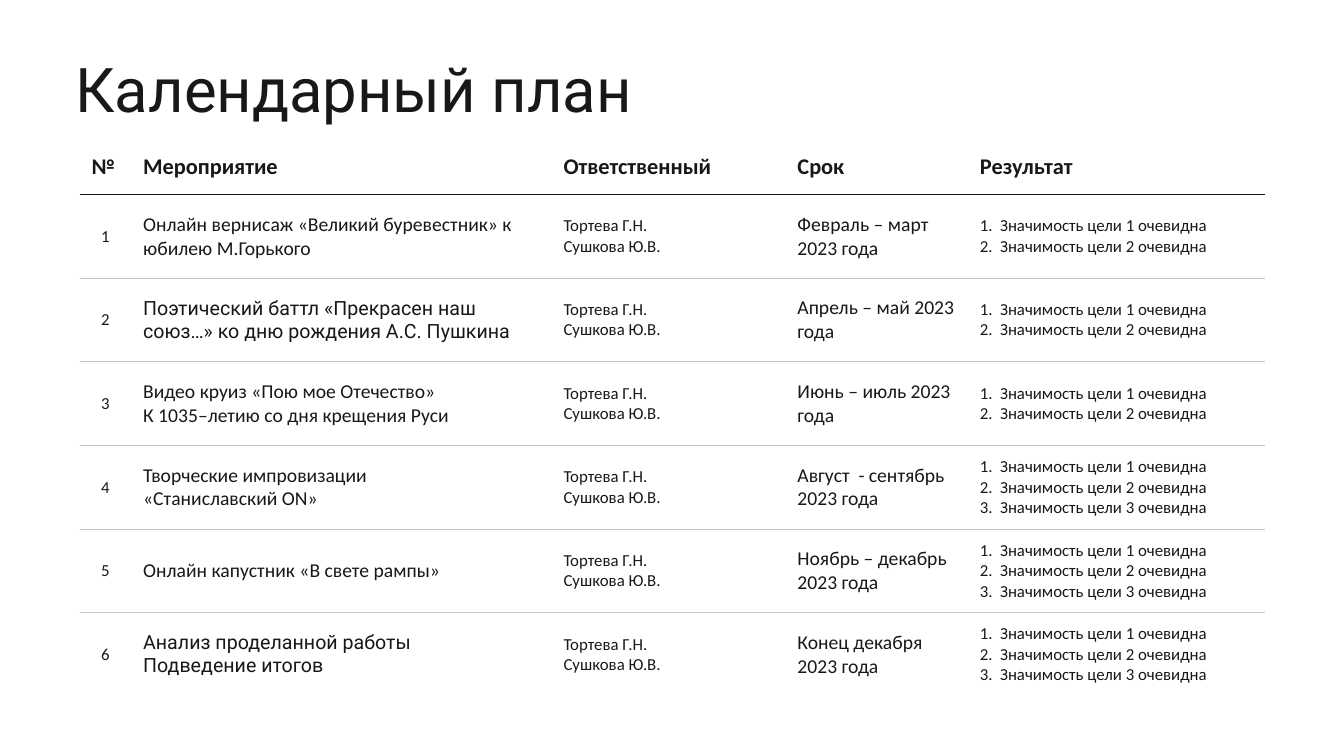
from lxml import etree
from pptx import Presentation
from pptx.dml.color import RGBColor
from pptx.enum.text import MSO_ANCHOR, PP_ALIGN
from pptx.oxml.ns import qn
from pptx.util import Pt

MIDDLE = MSO_ANCHOR.MIDDLE
CENTER = PP_ALIGN.CENTER
PX = 9144  # 100 px to the inch
COLORS = {"ink": "181818", "rule": "C5C5C5"}
BODY_FONT, ACCENT_FONT = "Calibri", "Roboto"
NO_STYLE = "{2D5ABB26-0587-4C30-8999-92F81FD0307C}"

TITLE = "Календарный план"
HEADERS = ["№", "Мероприятие", "Ответственный", "Срок", "Результат"]
PEOPLE = ["Тортева Г.Н.", "Сушкова Ю.В."]
# event lines, event font, period, number of goals
EVENTS = [
    (["Онлайн вернисаж «Великий буревестник» к юбилею М.Горького"], BODY_FONT,
     "Февраль – март 2023 года", 2),
    (["Поэтический баттл «Прекрасен наш союз…» ко дню рождения А.С. Пушкина"], ACCENT_FONT,
     "Апрель – май 2023 года", 2),
    (["Видео круиз «Пою мое Отечество»", "К 1035–летию со дня крещения Руси"], BODY_FONT,
     "Июнь – июль 2023 года", 2),
    (["Творческие импровизации", "«Станиславский ON»"], BODY_FONT,
     "Август  - сентябрь 2023 года", 3),
    (["Онлайн капустник «В свете рампы»"], BODY_FONT,
     "Ноябрь – декабрь 2023 года", 3),
    (["Анализ проделанной работы", "Подведение итогов"], ACCENT_FONT,
     "Конец декабря 2023 года", 3),
]

SLIDE_SIZE = (1333, 750)
TITLE_BOX = (65, 52, 1267, 79)
TABLE_LEFT, TABLE_TOP = 79, 138
COLUMN_WIDTHS = [51, 417, 232, 181, 295]
HEADER_HEIGHT, ROW_HEIGHT = 55, 83
INSET_X, INSET_Y = 12, 6
NUMBER_INDENT = 20


def style_font(para, size, font=BODY_FONT, bold=False):
    para.font.size = Pt(size)
    para.font.name = font
    para.font.bold = bold
    para.font.color.rgb = RGBColor.from_string(COLORS["ink"])


def number_paragraph(para):
    """Give a paragraph automatic 1. 2. 3. numbering with a hanging indent."""
    properties = para._p.get_or_add_pPr()
    properties.set("marL", str(NUMBER_INDENT * PX))
    properties.set("indent", str(-NUMBER_INDENT * PX))
    numbering = etree.Element(qn("a:buAutoNum"), type="arabicPeriod")
    properties.find(qn("a:defRPr")).addprevious(numbering)


def add_border(cell, side, color, width):
    line = etree.SubElement(cell._tc.get_or_add_tcPr(), qn(f"a:{side}"), w=str(Pt(width)))
    fill = etree.SubElement(line, qn("a:solidFill"))
    etree.SubElement(fill, qn("a:srgbClr"), val=COLORS[color])


def fill_cell(cell, lines, size, font=BODY_FONT, bold=False, align=None, numbered=False):
    cell.vertical_anchor = MIDDLE
    cell.margin_left = cell.margin_right = INSET_X * PX
    cell.margin_top = cell.margin_bottom = INSET_Y * PX
    frame = cell.text_frame
    for index, line in enumerate(lines):
        para = frame.add_paragraph() if index else frame.paragraphs[0]
        para.text = line
        para.alignment = align
        style_font(para, size, font, bold)
        if numbered:
            number_paragraph(para)


def add_title(page):
    box = page.shapes.add_textbox(*(length * PX for length in TITLE_BOX))
    frame = box.text_frame
    frame.word_wrap = True
    frame.vertical_anchor = MIDDLE
    para = frame.paragraphs[0]
    para.text = TITLE
    para.line_spacing = 0.9
    style_font(para, 44, ACCENT_FONT)


def add_plan(page):
    heights = [HEADER_HEIGHT] + [ROW_HEIGHT] * len(EVENTS)
    frame = page.shapes.add_table(
        len(heights), len(HEADERS), TABLE_LEFT * PX, TABLE_TOP * PX,
        sum(COLUMN_WIDTHS) * PX, sum(heights) * PX)
    table = frame.table
    table.first_row = table.horz_banding = False
    table._tbl.tblPr.find(qn("a:tableStyleId")).text = NO_STYLE
    for column, width in zip(table.columns, COLUMN_WIDTHS):
        column.width = width * PX
    for row, height in zip(table.rows, heights):
        row.height = height * PX

    for column, header in enumerate(HEADERS):
        fill_cell(table.cell(0, column), [header], 16, bold=True)
    for number, (event, font, period, goal_count) in enumerate(EVENTS, 1):
        goals = [f"Значимость цели {goal} очевидна" for goal in range(1, goal_count + 1)]
        cells = table.rows[number].cells
        fill_cell(cells[0], [str(number)], 12, align=CENTER)
        fill_cell(cells[1], event, 14, font)
        fill_cell(cells[2], PEOPLE, 12)
        fill_cell(cells[3], [period], 14)
        fill_cell(cells[4], goals, 12, numbered=True)

    rules = [("ink", 1.5)] + [("rule", 1)] * (len(EVENTS) - 1)
    for index, row in enumerate(table.rows):
        for cell in row.cells:
            if index > 0:
                add_border(cell, "lnT", *rules[index - 1])
            if index < len(rules):
                add_border(cell, "lnB", *rules[index])
            cell.fill.background()


def main():
    deck = Presentation()
    deck.slide_width, deck.slide_height = (length * PX for length in SLIDE_SIZE)
    page = deck.slides.add_slide(deck.slide_layouts[6])
    add_title(page)
    add_plan(page)
    deck.save("out.pptx")


if __name__ == "__main__":
    main()
